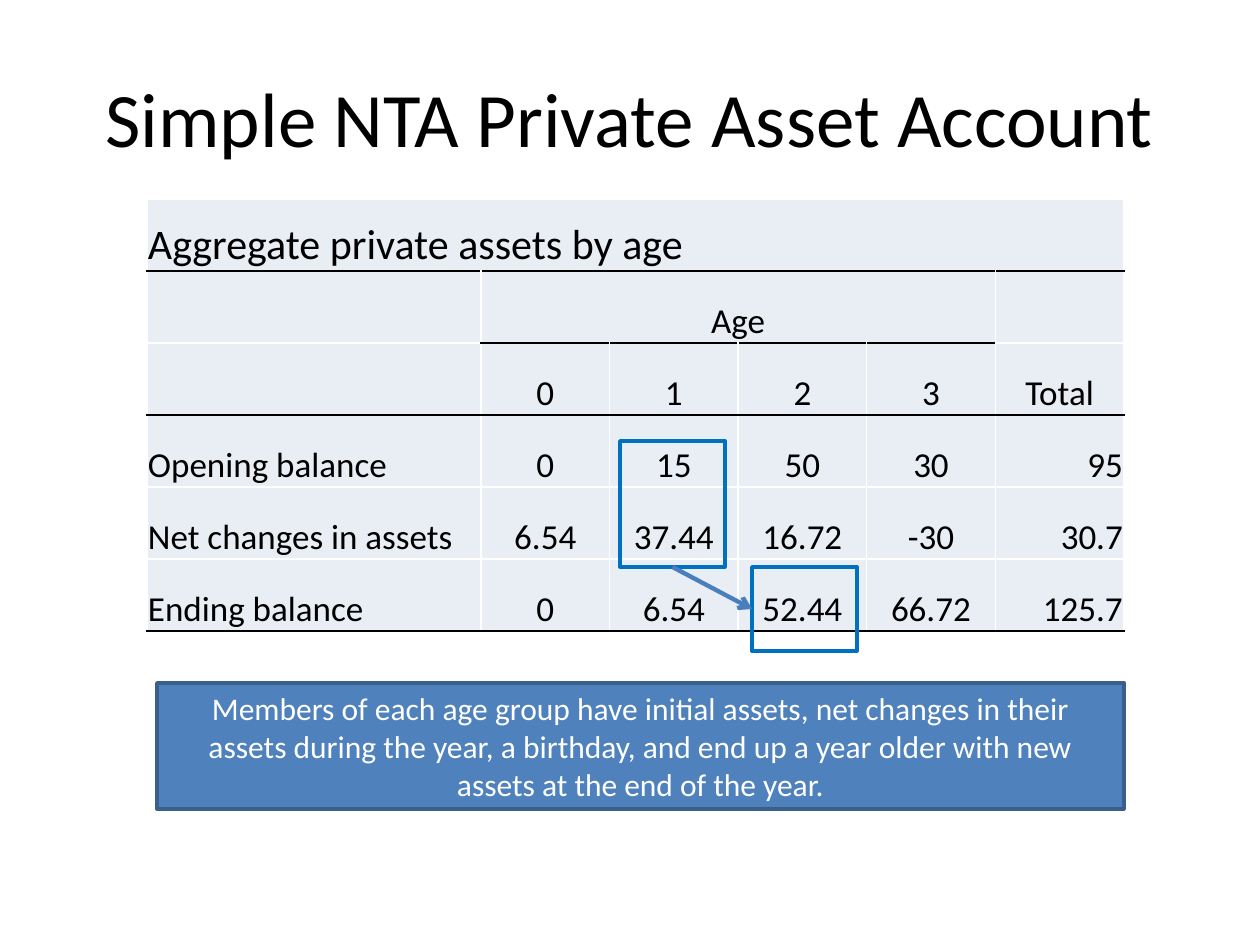
"""Build the slide on the simple NTA private asset account."""
from dataclasses import dataclass
from typing import Any

from pptx import Presentation
from pptx import util as u
from pptx.dml.color import RGBColor
from pptx.enum import shapes, text
from pptx.oxml.ns import qn
from lxml import etree

PX_PER_INCH = 126


@dataclass(frozen=True)
class Theme:
    font: str = "Calibri"
    ink: str = "000000"
    paper: str = "FFFFFF"
    cell: str = "E9EDF4"
    note: str = "4F81BD"
    note_edge: str = "3A5F8C"
    frame: str = "0070C0"
    arrow: str = "4B7EBC"
    title_size: int = 44
    caption_size: int = 24
    table_size: int = 20
    note_size: int = 18


@dataclass(frozen=True)
class Area:
    left: int
    top: int
    width: int
    height: int


THEME = Theme()
LEFT, CENTER, RIGHT = text.PP_ALIGN.LEFT, text.PP_ALIGN.CENTER, text.PP_ALIGN.RIGHT

PAGE = Area(0, 0, 1260, 945)
TITLE = Area(63, 38, 1134, 157)
TABLE = Area(147, 199, 977, 432)
NOTE = Area(157, 683, 967, 126)
AGE_1_ASSETS = Area(620, 441, 105, 126)
AGE_2_ENDING = Area(752, 567, 105, 84)

LABEL_WIDTH = 334
CELL_INSET = 1
ROWS = [
    ["Aggregate private assets by age", "", "", "", "", ""],
    ["", "Age", "", "", "", ""],
    ["", "0", "1", "2", "3", "Total"],
    ["Opening balance", "0", "15", "50", "30", "95"],
    ["Net changes in assets", "6.54", "37.44", "16.72", "-30", "30.7"],
    ["Ending balance", "0", "6.54", "52.44", "66.72", "125.7"],
]
FULL_RULES = {0, 2, 5}
AGE_RULE = 1
AGE_COLUMNS = range(1, 5)
HEADER_ROW = 2
NOTE_TEXT = (
    "Members of each age group have initial assets, net changes in their "
    "assets during the year, a birthday, and end up a year older with new "
    "assets at the end of the year."
)


def px(length: float) -> u.Emu:
    """Turn pixels into EMU."""
    return u.Emu(round(length * u.Inches(1) / PX_PER_INCH))


def place(area: Area) -> tuple[u.Emu, ...]:
    """Give the position and size of an area in EMU."""
    return px(area.left), px(area.top), px(area.width), px(area.height)


def rgb(value: str) -> RGBColor:
    """Turn a hex string into a colour."""
    return RGBColor.from_string(value)


def write(frame: Any, words: str, *, size: int, color: str = THEME.ink, align: Any = CENTER) -> None:
    """Write one formatted paragraph into a text frame."""
    para = frame.paragraphs[0]
    para.alignment = align
    span = para.add_run()
    span.text = words
    span.font.name = THEME.font
    span.font.size = u.Pt(size)
    span.font.color.rgb = rgb(color)


def add_title(page: Any) -> None:
    """Add the title."""
    frame = page.shapes.add_textbox(*place(TITLE)).text_frame
    frame.word_wrap = True
    frame.vertical_anchor = text.MSO_ANCHOR.MIDDLE
    write(frame, "Simple NTA Private Asset Account", size=THEME.title_size)


def add_box(page: Any, area: Area, *, edge: str, fill: str | None = None) -> Any:
    """Add a rectangle, hollow unless a fill is given."""
    box = page.shapes.add_shape(shapes.MSO_SHAPE.RECTANGLE, *place(area))
    box.shadow.inherit = False
    if fill:
        box.fill.solid()
        box.fill.fore_color.rgb = rgb(fill)
    else:
        box.fill.background()
    box.line.color.rgb = rgb(edge)
    box.line.width = u.Pt(2)
    return box


def rule_color(row: int, column: int) -> str:
    """Give the colour of the line under a cell."""
    under_age = row == AGE_RULE and column in AGE_COLUMNS
    return THEME.ink if row in FULL_RULES or under_age else THEME.paper


def set_borders(cell: Any, row: int, column: int) -> None:
    """Draw the four borders of a cell."""
    colors = {
        "a:lnL": THEME.paper,
        "a:lnR": THEME.paper,
        "a:lnT": rule_color(row - 1, column),
        "a:lnB": rule_color(row, column),
    }
    properties = cell._tc.get_or_add_tcPr()
    for tag, color in colors.items():
        line = etree.SubElement(properties, qn(tag), w=str(u.Pt(1)))
        fill = etree.SubElement(line, qn("a:solidFill"))
        etree.SubElement(fill, qn("a:srgbClr"), val=color)


def cell_align(row: int, column: int) -> Any:
    """Give the alignment of a table cell."""
    if column == 0:
        return LEFT
    return RIGHT if column == len(ROWS[0]) - 1 and row > HEADER_ROW else CENTER


def add_asset_table(page: Any) -> None:
    """Add the table of assets by age."""
    row_count, column_count = len(ROWS), len(ROWS[0])
    table = page.shapes.add_table(row_count, column_count, *place(TABLE)).table
    table.first_row = table.horz_banding = False
    value_width = (TABLE.width - LABEL_WIDTH) / (column_count - 1)
    for index, column in enumerate(table.columns):
        column.width = px(value_width if index else LABEL_WIDTH)
    for row in table.rows:
        row.height = px(TABLE.height / row_count)
    table.cell(0, 0).merge(table.cell(0, column_count - 1))
    table.cell(AGE_RULE, AGE_COLUMNS[0]).merge(table.cell(AGE_RULE, AGE_COLUMNS[-1]))
    for row, values in enumerate(ROWS):
        for column, value in enumerate(values):
            cell = table.cell(row, column)
            set_borders(cell, row, column)
            cell.fill.solid()
            cell.fill.fore_color.rgb = rgb(THEME.cell)
            cell.vertical_anchor = text.MSO_ANCHOR.BOTTOM
            cell.margin_left = cell.margin_right = cell.margin_top = px(CELL_INSET)
            cell.margin_bottom = 0
            if value:
                size = THEME.table_size if row else THEME.caption_size
                write(cell.text_frame, value, size=size, align=cell_align(row, column))


def add_note(page: Any) -> None:
    """Add the explanation under the table."""
    box = add_box(page, NOTE, edge=THEME.note_edge, fill=THEME.note)
    box.text_frame.word_wrap = True
    box.text_frame.vertical_anchor = text.MSO_ANCHOR.MIDDLE
    write(box.text_frame, NOTE_TEXT, size=THEME.note_size, color=THEME.paper)


def add_arrow(page: Any, source: Any, target: Any) -> None:
    """Join the bottom of one box to the left side of another."""
    arrow = page.shapes.add_connector(shapes.MSO_CONNECTOR.STRAIGHT, 0, 0, 0, 0)
    arrow.begin_connect(source, 2)
    arrow.end_connect(target, 1)
    arrow.line.color.rgb = rgb(THEME.arrow)
    arrow.line.width = u.Pt(2.5)
    etree.SubElement(arrow.line._get_or_add_ln(), qn("a:tailEnd"), type="arrow")
    etree.SubElement(arrow._element.spPr, qn("a:effectLst"))


def main() -> None:
    """Build and save the deck."""
    deck = Presentation()
    deck.slide_width, deck.slide_height = px(PAGE.width), px(PAGE.height)
    page = deck.slides.add_slide(deck.slide_layouts[6])
    add_title(page)
    add_asset_table(page)
    add_note(page)
    source, target = (add_box(page, area, edge=THEME.frame) for area in (AGE_1_ASSETS, AGE_2_ENDING))
    add_arrow(page, source, target)
    deck.save("out.pptx")


if __name__ == "__main__":
    main()
